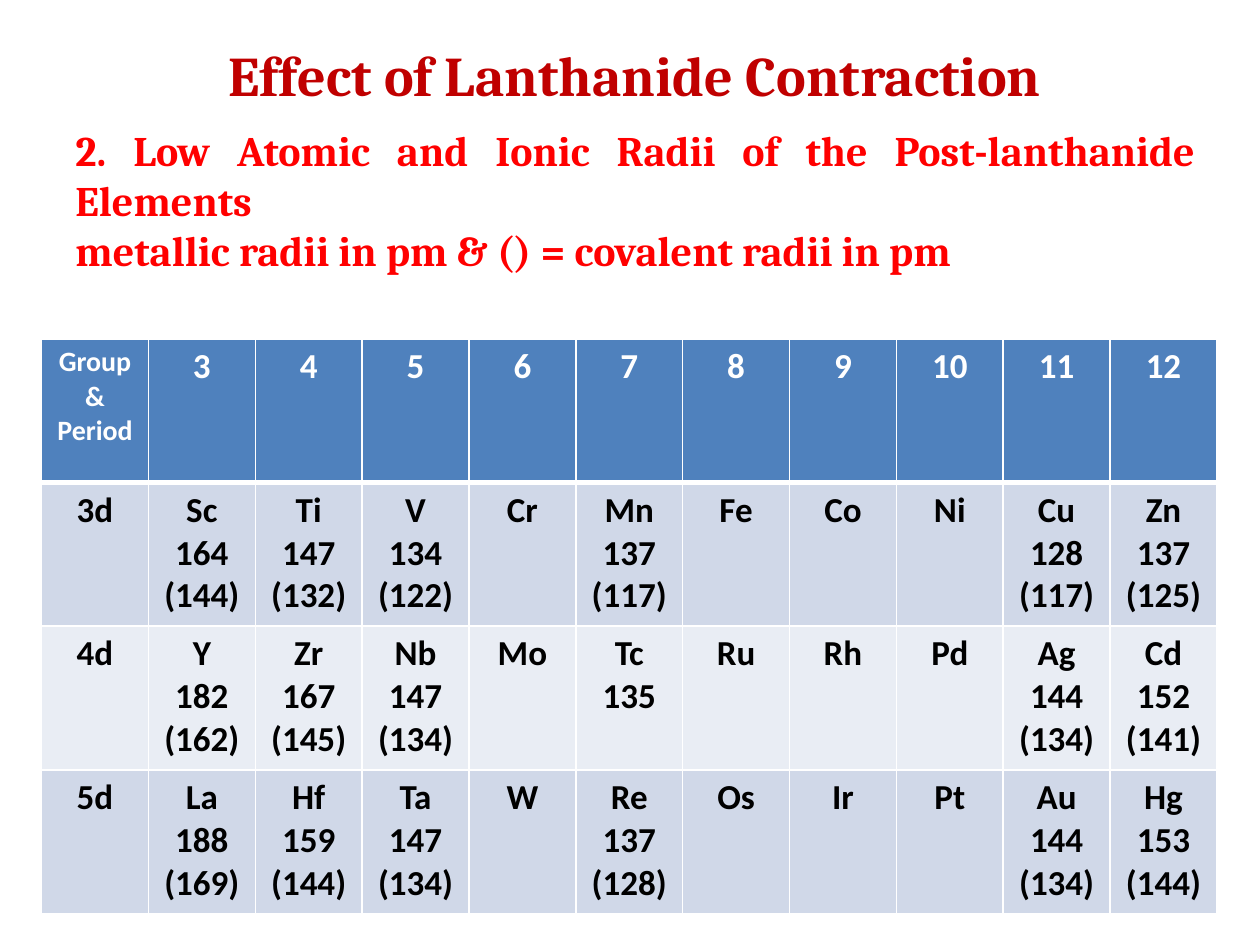
from lxml import etree
from pptx import Presentation
from pptx.dml.color import RGBColor
from pptx.enum.text import PP_ALIGN
from pptx.oxml.ns import qn
from pptx.util import Inches, Pt

CENTER, JUSTIFY = PP_ALIGN.CENTER, PP_ALIGN.JUSTIFY
COLORS = {
    "title": "C00000", "subtitle": "FF0000", "header": "4F81BD",
    "odd": "D0D8E8", "even": "E9EDF4", "white": "FFFFFF", "black": "000000",
}
ROWS = [
    ["Group & Period"] + [str(group) for group in range(3, 13)],
    ["3d", "Sc 164 (144)", "Ti 147 (132)", "V 134 (122)", "Cr", "Mn 137 (117)",
     "Fe", "Co", "Ni", "Cu 128 (117)", "Zn 137 (125)"],
    ["4d", "Y 182 (162)", "Zr 167 (145)", "Nb 147 (134)", "Mo", "Tc 135",
     "Ru", "Rh", "Pd", "Ag 144 (134)", "Cd 152 (141)"],
    ["5d", "La 188 (169)", "Hf 159 (144)", "Ta 147 (134)", "W", "Re 137 (128)",
     "Os", "Ir", "Pt", "Au 144 (134)", "Hg 153 (144)"],
]


def rgb(name):
    return RGBColor.from_string(COLORS[name])


def write(p, text, size=20, font="Calibri", color="black", align=CENTER, before=0):
    p.text = text
    p.alignment = align
    p.space_before = Pt(before)
    for r in p.runs:
        r.font.size = Pt(size)
        r.font.name = font
        r.font.bold = True
        r.font.color.rgb = rgb(color)


def set_borders(cell, **widths):
    tcPr = cell._tc.get_or_add_tcPr()
    for i, side in enumerate("LRTB"):
        ln = etree.Element(qn(f"a:ln{side}"), w=str(Pt(widths.get(side, 1))))
        fill = etree.SubElement(ln, qn("a:solidFill"))
        etree.SubElement(fill, qn("a:srgbClr"), val=COLORS["white"])
        tcPr.insert(i, ln)


def add_heading(s):
    tf = s.shapes.add_textbox(Inches(0.5), Inches(0.27), Inches(9.08), Inches(2.52)).text_frame
    tf.word_wrap = True
    write(tf.paragraphs[0], "Effect of Lanthanide Contraction",
          size=32, font="Cambria", color="title")
    subtitle = dict(size=24, font="Cambria", color="subtitle", align=JUSTIFY)
    write(tf.add_paragraph(), "2. Low Atomic and Ionic Radii of the Post-lanthanide Elements",
          before=9.5, **subtitle)
    write(tf.add_paragraph(), "metallic radii in pm & () = covalent radii in pm", **subtitle)


def add_radii_table(s):
    table = s.shapes.add_table(len(ROWS), len(ROWS[0]), Inches(0.33), Inches(2.69),
                               Inches(9.33), Inches(4.56)).table
    for i, row in enumerate(ROWS):
        fill = "header" if i == 0 else "odd" if i % 2 else "even"
        for j, text in enumerate(row):
            cell = table.cell(i, j)
            cell.fill.solid()
            cell.fill.fore_color.rgb = rgb(fill)
            p = cell.text_frame.paragraphs[0]
            if i == 0:
                write(p, text, size=20 if j else 16, color="white")
                set_borders(cell, B=3)
            else:
                write(p, text.replace(" ", "\v"))
                set_borders(cell, T=3 if i == 1 else 1)


def main():
    prs = Presentation()
    prs.slide_width, prs.slide_height = Inches(10), Inches(7.5)
    s = prs.slides.add_slide(prs.slide_layouts[6])
    add_heading(s)
    add_radii_table(s)
    prs.save("out.pptx")


if __name__ == "__main__":
    main()
